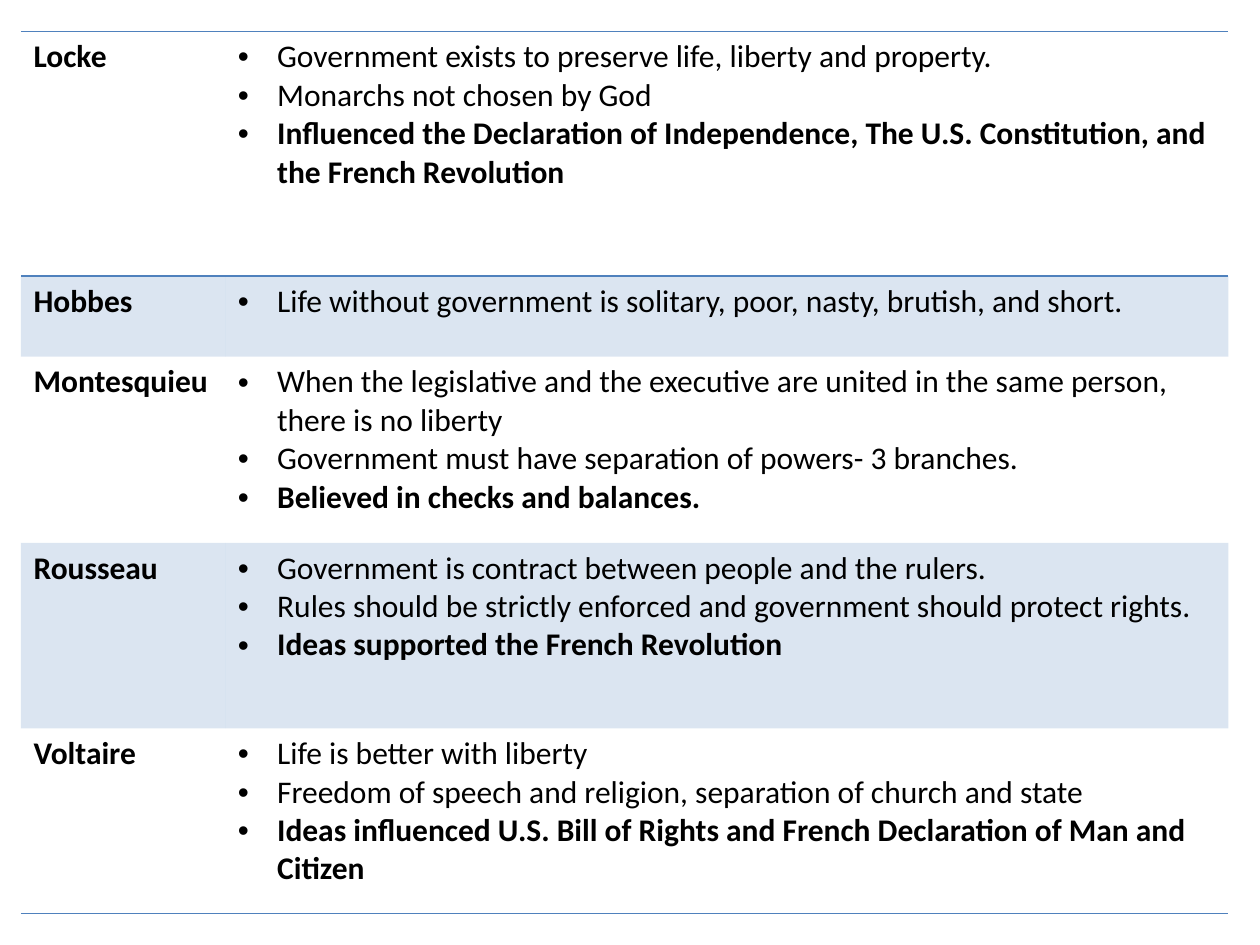
from lxml.etree import SubElement
from pptx import Presentation
from pptx.dml.color import RGBColor
from pptx.oxml.ns import qn
from pptx.util import Pt

ACCENT = "4F81BD"
NO_GRID_STYLE = "{2D5ABB26-0587-4C30-8999-92F81FD0307C}"

# Each thinker: name, row height, ideas, lasting influence in bold
thinkers = [
    ("Locke", 139.7,
     ["Government exists to preserve life, liberty and property.",
      "Monarchs not chosen by God"],
     ["Influenced the Declaration of Independence, The U.S. Constitution, "
      "and the French Revolution"]),
    ("Hobbes", 46.1,
     ["Life without government is solitary, poor, nasty, brutish, and short."],
     []),
    ("Montesquieu", 106.4,
     ["When the legislative and the executive are united in the same person, "
      "there is no liberty",
      "Government must have separation of powers- 3 branches."],
     ["Believed in checks and balances."]),
    ("Rousseau", 106,
     ["Government is contract between people and the rulers.",
      "Rules should be strictly enforced and government should protect rights."],
     ["Ideas supported the French Revolution"]),
    ("Voltaire", 105.8,
     ["Life is better with liberty",
      "Freedom of speech and religion, separation of church and state"],
     ["Ideas influenced U.S. Bill of Rights and French Declaration of Man "
      "and Citizen"]),
]


def write(paragraph, text, bold=False, bullet=False, size=18, color="000000"):
    if bullet:
        props = paragraph._p.get_or_add_pPr()
        props.set("marL", str(Pt(22.5)))
        props.set("indent", str(-Pt(22.5)))
        SubElement(props, qn("a:buFont"), typeface="Arial")
        SubElement(props, qn("a:buChar"), char="•")
    run = paragraph.add_run()
    run.text = text
    run.font.name = "Calibri"
    run.font.size = Pt(size)
    run.font.bold = bold
    run.font.color.rgb = RGBColor.from_string(color)


def add_border(cell, side):
    line = SubElement(cell._tc.get_or_add_tcPr(), qn(f"a:ln{side}"), w=str(Pt(1)))
    SubElement(SubElement(line, qn("a:solidFill")), qn("a:srgbClr"), val=ACCENT)


prs = Presentation()
prs.slide_width, prs.slide_height = Pt(720), Pt(540)
slide = prs.slides.add_slide(prs.slide_layouts[6])

# Table without header or built-in banding
table = slide.shapes.add_table(
    len(thinkers), 2, Pt(12), Pt(18), Pt(690), Pt(504)).table
table.first_row = table.horz_banding = False
table._tbl.tblPr.find(qn("a:tableStyleId")).text = NO_GRID_STYLE
table.columns[0].width, table.columns[1].width = Pt(116.7), Pt(573.3)

for index, (name, height, ideas, influence) in enumerate(thinkers):
    row = table.rows[index]
    row.height = Pt(height)
    name_cell, ideas_cell = row.cells

    # Name and bulleted ideas
    write(name_cell.text_frame.paragraphs[0], name, bold=True)
    frame = ideas_cell.text_frame
    for number, point in enumerate(ideas + influence):
        paragraph = frame.add_paragraph() if number else frame.paragraphs[0]
        write(paragraph, point, bold=point in influence, bullet=True)

    # Rules around the first row and below the last, tint on every second row
    for cell in (name_cell, ideas_cell):
        if index == 0:
            add_border(cell, "T")
        if index in (0, len(thinkers) - 1):
            add_border(cell, "B")
        if index % 2:
            cell.fill.solid()
            cell.fill.fore_color.rgb = RGBColor.from_string(ACCENT)
            tint = cell._tc.tcPr.find(qn("a:solidFill")).find(qn("a:srgbClr"))
            SubElement(tint, qn("a:alpha"), val="20000")
        else:
            cell.fill.background()

prs.save("out.pptx")
